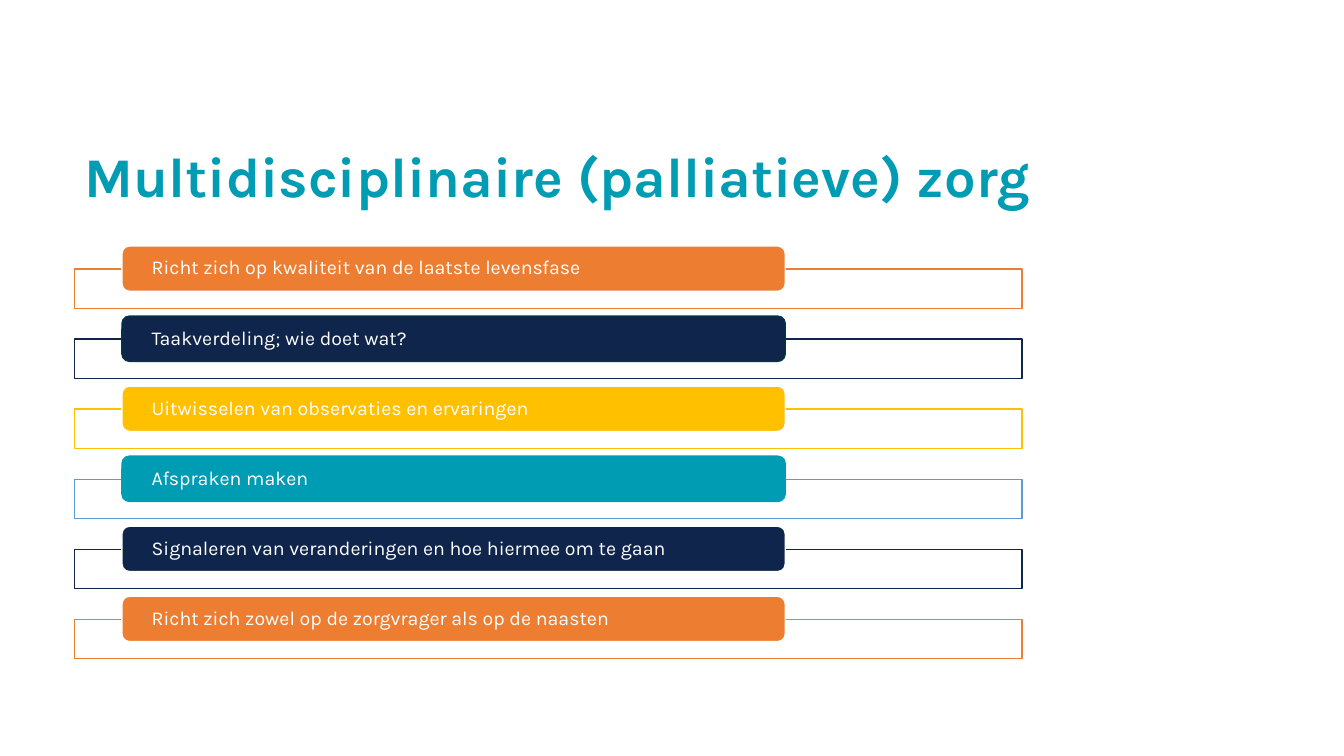
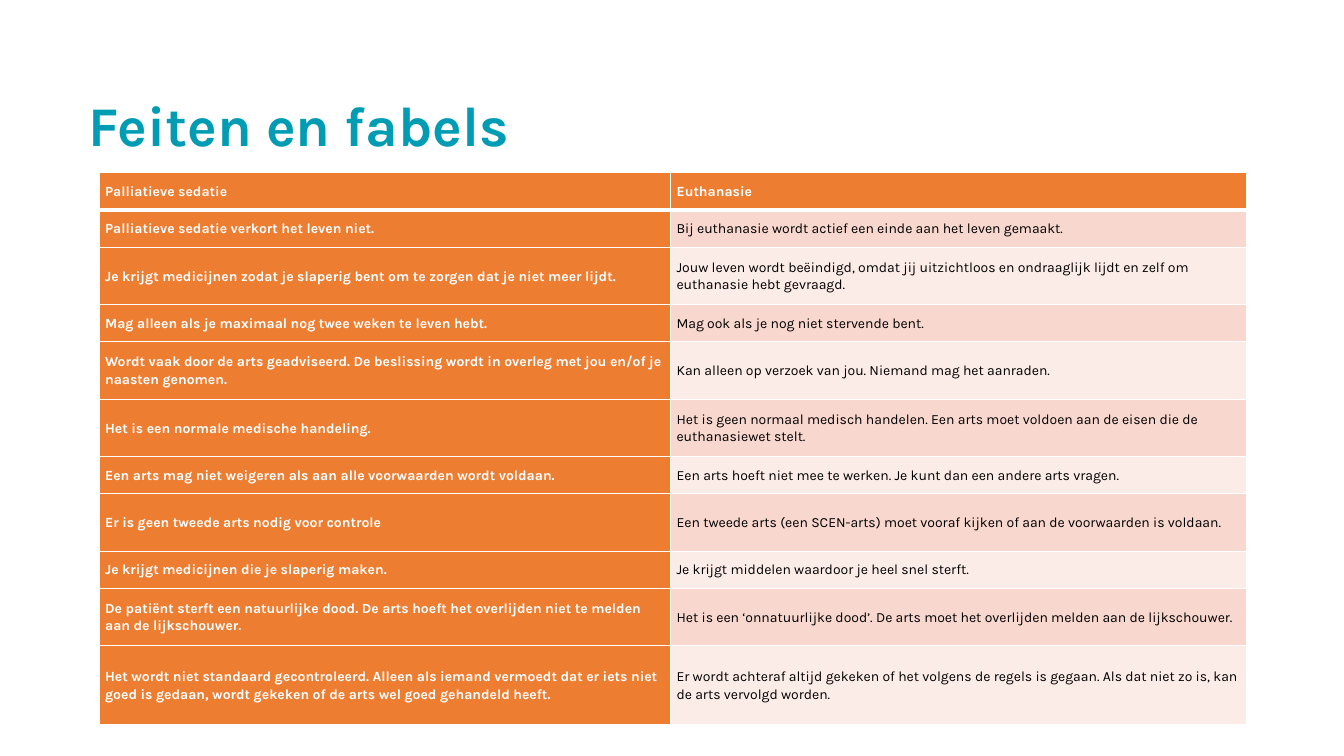
"""Builds two slides on palliative care: a list of bars and a table."""
from dataclasses import dataclass

from lxml.etree import SubElement
from pptx import Presentation
from pptx.dml.color import RGBColor
from pptx.enum.shapes import MSO_SHAPE
from pptx.enum.text import MSO_ANCHOR, MSO_AUTO_SIZE, PP_ALIGN
from pptx.oxml.ns import qn
from pptx.util import Pt

FONT = "Karla"
WHITE = RGBColor(0xFF, 0xFF, 0xFF)
BLACK = RGBColor(0x00, 0x00, 0x00)
TEAL = RGBColor(0x00, 0x9C, 0xB4)
DEEP = RGBColor(0x00, 0x37, 0x41)
NAVY = RGBColor(0x0F, 0x25, 0x4C)
ORANGE = RGBColor(0xED, 0x7D, 0x31)
YELLOW = RGBColor(0xFF, 0xC0, 0x00)
BLUE = RGBColor(0x5B, 0x9B, 0xD5)
ROSE = RGBColor(0xF8, 0xD7, 0xCE)
PALE = RGBColor(0xFC, 0xEC, 0xE8)

STEP = 50.04
LOW, MID, HIGH = 26.6, 41, 56.2


@dataclass(frozen=True)
class Bar:
    """A labelled bar, with the frame behind it."""

    text: str
    fill: RGBColor
    edge: RGBColor
    frame: RGBColor


@dataclass(frozen=True)
class Row:
    """A table row with its height."""

    left: str
    right: str
    height: float


BARS = [
    Bar("Richt zich op kwaliteit van de laatste levensfase", ORANGE, WHITE, ORANGE),
    Bar("Taakverdeling; wie doet wat?", NAVY, DEEP, NAVY),
    Bar("Uitwisselen van observaties en ervaringen", YELLOW, WHITE, YELLOW),
    Bar("Afspraken maken", TEAL, TEAL, BLUE),
    Bar("Signaleren van veranderingen en hoe hiermee om te gaan", NAVY, WHITE, NAVY),
    Bar("Richt zich zowel op de zorgvrager als op de naasten", ORANGE, WHITE, ORANGE),
]

ROWS = [
    Row("Palliatieve sedatie", "Euthanasie", LOW),
    Row("Palliatieve sedatie verkort het leven niet.",
        "Bij euthanasie wordt actief een einde aan het leven gemaakt.", LOW),
    Row("Je krijgt medicijnen zodat je slaperig bent om te zorgen dat je niet meer lijdt.",
        "Jouw leven wordt beëindigd, omdat jij uitzichtloos en ondraaglijk lijdt en zelf om "
        "euthanasie hebt gevraagd.", MID),
    Row("Mag alleen als je maximaal nog twee weken te leven hebt.",
        "Mag ook als je nog niet stervende bent.", LOW),
    Row("Wordt vaak door de arts geadviseerd. De beslissing wordt in overleg met jou en/of je "
        "naasten genomen.",
        "Kan alleen op verzoek van jou. Niemand mag het aanraden.", MID),
    Row("Het is een normale medische handeling.",
        "Het is geen normaal medisch handelen. Een arts moet voldoen aan de eisen die de "
        "euthanasiewet stelt.", MID),
    Row("Een arts mag niet weigeren als aan alle voorwaarden wordt voldaan.",
        "Een arts hoeft niet mee te werken. Je kunt dan een andere arts vragen.", LOW),
    Row("Er is geen tweede arts nodig voor controle",
        "Een tweede arts (een SCEN-arts) moet vooraf kijken of aan de voorwaarden is voldaan.",
        MID),
    Row("Je krijgt medicijnen die je slaperig maken.",
        "Je krijgt middelen waardoor je heel snel sterft.", LOW),
    Row("De patiënt sterft een natuurlijke dood. De arts hoeft het overlijden niet te melden "
        "aan de lijkschouwer.",
        "Het is een ‘onnatuurlijke dood’. De arts moet het overlijden melden aan de "
        "lijkschouwer.", MID),
    Row("Het wordt niet standaard gecontroleerd. Alleen als iemand vermoedt dat er iets niet "
        "goed is gedaan, wordt gekeken of de arts wel goed gehandeld heeft.",
        "Er wordt achteraf altijd gekeken of het volgens de regels is gegaan. Als dat niet zo "
        "is, kan de arts vervolgd worden.", HIGH),
]


def write(frame, text: str, size: float, color: RGBColor, bold: bool, space: float) -> None:
    """Fill a text frame with one left-aligned paragraph."""
    frame.text = text
    para = frame.paragraphs[0]
    para.alignment = PP_ALIGN.LEFT
    para.line_spacing = space
    for run in para.runs:
        font = run.font
        font.name, font.size, font.bold = FONT, Pt(size), bold
        font.color.rgb = color


def start(deck, text: str, left: float, top: float):
    """Add a title-only slide and place its title."""
    slide = deck.slides.add_slide(deck.slide_layouts[5])
    title = slide.shapes.title
    title.left, title.top = Pt(left), Pt(top)
    title.width, title.height = Pt(847.5), Pt(104.4)
    frame = title.text_frame
    write(frame, text, 40, TEAL, True, 0.9)
    frame.word_wrap = True
    frame.auto_size = MSO_AUTO_SIZE.NONE
    frame.vertical_anchor = MSO_ANCHOR.MIDDLE
    return slide


def block(slide, kind: MSO_SHAPE, left: float, top: float, width: float, height: float,
          fill: RGBColor, edge: RGBColor):
    """Add a flat shape with a fill and a thin line."""
    shape = slide.shapes.add_shape(kind, Pt(left), Pt(top), Pt(width), Pt(height))
    shape.shadow.inherit = False
    shape.fill.solid()
    shape.fill.fore_color.rgb = fill
    shape.line.color.rgb = edge
    shape.line.width = Pt(1)
    return shape


def draw(slide, bar: Bar, drop: float) -> None:
    """Draw a frame and its bar, moved down by the given drop."""
    block(slide, MSO_SHAPE.RECTANGLE, 53.3, 192.2 + drop, 676.8, 28.1, WHITE, bar.frame)
    pill = block(slide, MSO_SHAPE.ROUNDED_RECTANGLE, 87.1, 175.7 + drop, 473.8, 32.4,
                 bar.fill, bar.edge)
    frame = pill.text_frame
    frame.margin_left = frame.margin_right = Pt(19.6)
    frame.margin_top = frame.margin_bottom = Pt(0)
    frame.word_wrap = True
    frame.vertical_anchor = MSO_ANCHOR.MIDDLE
    write(frame, bar.text, 14, WHITE, False, 0.9)


def edges(cell, top: float, base: float) -> None:
    """Give a cell white borders."""
    props = cell._tc.get_or_add_tcPr()
    for tag, width in (("lnL", 1), ("lnR", 1), ("lnT", top), ("lnB", base)):
        line = SubElement(props, qn(f"a:{tag}"), w=str(Pt(width)))
        fill = SubElement(line, qn("a:solidFill"))
        SubElement(fill, qn("a:srgbClr"), val=str(WHITE))


def paint(cell, text: str, fill: RGBColor, color: RGBColor, bold: bool) -> None:
    """Write and colour a table cell."""
    cell.margin_left = cell.margin_right = Pt(4.3)
    cell.margin_top = cell.margin_bottom = Pt(4.3)
    cell.vertical_anchor = MSO_ANCHOR.MIDDLE
    cell.fill.solid()
    cell.fill.fore_color.rgb = fill
    write(cell.text_frame, text, 10, color, bold, 1.07)
    cell.text_frame.paragraphs[0].space_after = Pt(8)


def chart(slide) -> None:
    """Draw the table of facts."""
    widths = (408.2, 411.1)
    tall = sum(row.height for row in ROWS)
    table = slide.shapes.add_table(len(ROWS), 2, Pt(70.8), Pt(123.4),
                                   Pt(sum(widths)), Pt(tall)).table
    for col, width in zip(table.columns, widths):
        col.width = Pt(width)
    for num, row in enumerate(ROWS):
        table.rows[num].height = Pt(row.height)
        for col, text in enumerate((row.left, row.right)):
            cell = table.cell(num, col)
            edges(cell, 3 if num == 1 else 1, 3 if num == 0 else 1)
            if num == 0 or col == 0:
                paint(cell, text, ORANGE, WHITE, True)
            else:
                paint(cell, text, ROSE if num % 2 else PALE, BLACK, False)


def main() -> None:
    """Build and save the deck."""
    deck = Presentation()
    deck.slide_width, deck.slide_height = Pt(960), Pt(540)
    slide = start(deck, "Multidisciplinaire (palliatieve) zorg", 53.3, 75.6)
    for num, bar in enumerate(BARS):
        draw(slide, bar, num * STEP)
    chart(start(deck, "Feiten en fabels", 56.2, 39.6))
    deck.save("out.pptx")


if __name__ == "__main__":
    main()
